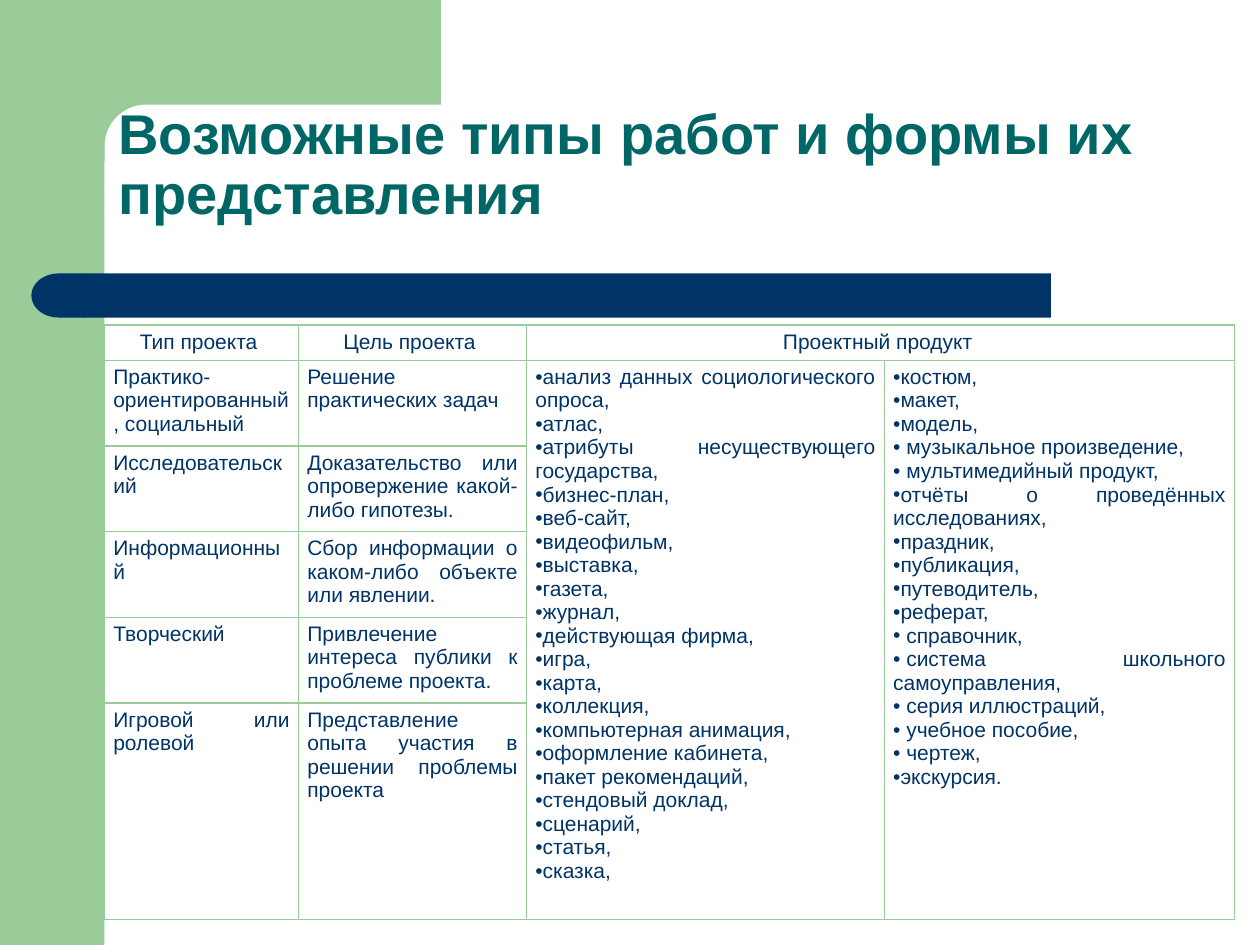
import math

import lxml.etree
import pptx
import pptx.dml.color
import pptx.enum.shapes
import pptx.enum.text
import pptx.oxml.ns
import pptx.util
from pptx.util import Inches

GREEN = pptx.dml.color.RGBColor(0x99, 0xCC, 0x99)
NAVY = pptx.dml.color.RGBColor(0x00, 0x33, 0x66)
TEAL = pptx.dml.color.RGBColor(0x00, 0x66, 0x66)
SHAPES = pptx.enum.shapes.MSO_SHAPE
ALIGN = pptx.enum.text.PP_ALIGN
NBSP = chr(160)
qn = pptx.oxml.ns.qn


def write_text(text_frame, lines, size=12, color=NAVY, bold=False,
               align=ALIGN.LEFT, bullet=None, line_spacing=None):
    """Write one paragraph per line, all in the same format."""
    text_frame.word_wrap = True
    for index, line in enumerate(lines):
        paragraph = text_frame.paragraphs[0] if index == 0 else text_frame.add_paragraph()
        paragraph.alignment = align
        if line_spacing:
            paragraph.line_spacing = line_spacing
        if bullet:
            properties = paragraph._p.get_or_add_pPr()
            properties.set("marL", "0")
            properties.set("indent", "0")
            lxml.etree.SubElement(properties, qn("a:buFont"), typeface="Arial")
            lxml.etree.SubElement(properties, qn("a:buChar"), char=bullet)
        run = paragraph.add_run()
        run.text = line
        run.font.name = "Arial"
        run.font.size = pptx.util.Pt(size)
        run.font.bold = bold
        run.font.color.rgb = color


def paint(shape, color):
    shape.shadow.inherit = False
    shape.fill.solid()
    shape.fill.fore_color.rgb = color
    shape.line.fill.background()


presentation = pptx.Presentation()
presentation.slide_width = Inches(10)
presentation.slide_height = Inches(7.5)
slide = presentation.slides.add_slide(presentation.slide_layouts[6])
shapes = slide.shapes

# Green side band and top block with a rounded inner corner
side_band = shapes.add_shape(SHAPES.RECTANGLE, 0, 0, Inches(0.83), Inches(7.5))
paint(side_band, GREEN)

radius, center = 0.33, 1.16
corner = [(center - radius * math.sin(math.radians(angle)),
           center - radius * math.cos(math.radians(angle)))
          for angle in range(0, 91, 5)]
outline = [(3.5, 0.83), *corner, (0.83, 1.28), (0.5, 1.28), (0.5, 0)]
builder = shapes.build_freeform(Inches(3.5), 0)
builder.add_line_segments([(Inches(x), Inches(y)) for x, y in outline])
paint(builder.convert_to_shape(), GREEN)

# Navy bar with a round left end
bar = shapes.add_shape(SHAPES.ROUNDED_RECTANGLE, Inches(0.67), Inches(2.17),
                       Inches(7.67), Inches(0.35))
bar.adjustments[0] = 0
paint(bar, NAVY)
bar_end = shapes.add_shape(SHAPES.FLOWCHART_DELAY, Inches(0.25), Inches(2.17),
                           Inches(0.43), Inches(0.35))
bar_end._element.spPr.find(qn("a:xfrm")).set("flipH", "1")
paint(bar_end, NAVY)

title = shapes.add_shape(SHAPES.ROUNDED_RECTANGLE, Inches(0.84), Inches(0.68),
                         Inches(8.67), Inches(1.25))
title.adjustments[0] = 0.22
title.shadow.inherit = False
title.fill.background()
title.line.fill.background()
title.text_frame.margin_left = title.text_frame.margin_right = Inches(0.02)
title.text_frame.vertical_anchor = pptx.enum.text.MSO_ANCHOR.BOTTOM
write_text(title.text_frame, ["Возможные типы работ и формы их представления"],
           size=32, color=TEAL, bold=True, line_spacing=0.9)

# Table
headers = ["Тип проекта", "Цель проекта", "Проектный продукт"]
projects = [
    ("Практико-ориентированный, социальный", "Решение практических задач"),
    ("Исследовательский", "Доказательство или опровержение какой-либо гипотезы."),
    ("Информационный", "Сбор информации о каком-либо объекте или явлении."),
    ("Творческий", "Привлечение интереса публики к проблеме проекта."),
    ("Игровой или ролевой", "Представление опыта участия в решении проблемы проекта"),
]
products = [
    ["анализ данных социологического опроса,", "атлас,",
     "атрибуты несуществующего государства,", "бизнес-план,", "веб-сайт,",
     "видеофильм,", "выставка,", "газета,", "журнал,", "действующая фирма,",
     "игра,", "карта,", "коллекция,", "компьютерная анимация,",
     "оформление кабинета,", "пакет рекомендаций,", "стендовый доклад,",
     "сценарий,", "статья,", "сказка,"],
    ["костюм,", "макет,", "модель,", NBSP + "музыкальное произведение,",
     NBSP + "мультимедийный продукт,", "отчёты о проведённых исследованиях,",
     "праздник,", "публикация,", "путеводитель,", "реферат,",
     NBSP + "справочник,", NBSP + "система школьного самоуправления,",
     NBSP + "серия иллюстраций,", NBSP + "учебное пособие,",
     NBSP + "чертеж,", "экскурсия."],
]
column_widths = [1.54, 1.81, 2.84, 2.78]
row_heights = [0.28] + [0.68] * 4 + [1.72]

table = shapes.add_table(len(row_heights), len(column_widths), Inches(0.83), Inches(2.58),
                         Inches(sum(column_widths)), Inches(sum(row_heights))).table
table.first_row = False
table.horz_banding = False
for column, width in zip(table.columns, column_widths):
    column.width = Inches(width)
for row, height in zip(table.rows, row_heights):
    row.height = Inches(height)

for cell in table.iter_cells():
    cell.margin_left = cell.margin_right = Inches(0.07)
    cell.margin_top = cell.margin_bottom = Inches(0.04)
    cell_properties = cell._tc.get_or_add_tcPr()
    for side in ("a:lnL", "a:lnR", "a:lnT", "a:lnB"):
        border = lxml.etree.SubElement(cell_properties, qn(side), w=str(pptx.util.Pt(1)))
        border_fill = lxml.etree.SubElement(border, qn("a:solidFill"))
        lxml.etree.SubElement(border_fill, qn("a:srgbClr"), val=str(GREEN))
    cell.fill.background()

table.cell(0, 2).merge(table.cell(0, 3))
for column_index, header in enumerate(headers):
    write_text(table.cell(0, column_index).text_frame, [header + NBSP], align=ALIGN.CENTER)
for row_index, project in enumerate(projects, start=1):
    for column_index, text in enumerate(project):
        write_text(table.cell(row_index, column_index).text_frame, [text + NBSP],
                   align=ALIGN.JUSTIFY)
for column_index, items in enumerate(products, start=2):
    cell = table.cell(1, column_index)
    cell.merge(table.cell(len(projects), column_index))
    write_text(cell.text_frame, [item + NBSP for item in items],
               align=ALIGN.JUSTIFY, bullet="•")

presentation.save("out.pptx")
